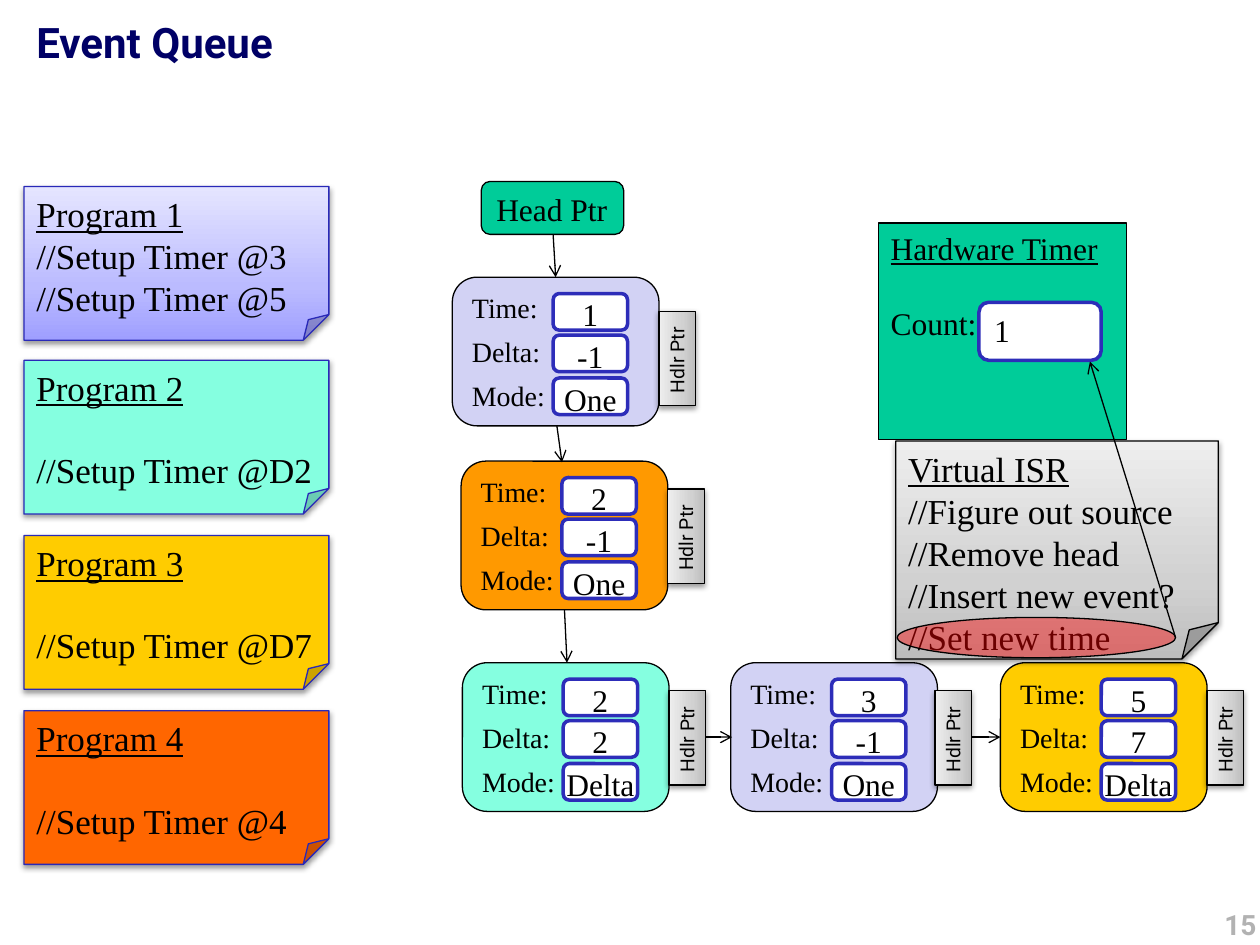
from copy import deepcopy

from lxml import etree
from pptx import Presentation
from pptx.dml.color import RGBColor
from pptx.enum.shapes import MSO_CONNECTOR, MSO_SHAPE
from pptx.enum.text import MSO_ANCHOR, MSO_AUTO_SIZE, PP_ALIGN
from pptx.oxml import parse_xml
from pptx.oxml.ns import nsdecls, qn
from pptx.util import Pt

RECT = MSO_SHAPE.RECTANGLE
ROUNDED = MSO_SHAPE.ROUNDED_RECTANGLE
FOLDED = MSO_SHAPE.FOLDED_CORNER
OVAL = MSO_SHAPE.OVAL
STRAIGHT = MSO_CONNECTOR.STRAIGHT
LEFT, CENTER, RIGHT = PP_ALIGN.LEFT, PP_ALIGN.CENTER, PP_ALIGN.RIGHT

PX = 9144  # 100 px to the inch
COLORS = {
    "navy": "000066", "page": "B2B2B2", "black": "000000", "white": "FFFFFF",
    "blue": "2929B8", "indigo": "2D2DB9", "aqua": "85FFE0", "gold": "FFCC00",
    "red_orange": "FF6600", "amber": "FF9900", "lavender": "D2D2F4",
    "green": "00CC99", "red": "FF0000",
}
GRADIENTS = {
    "violet_fade": ("9F9FFF", "BBBBFF", "E5E5FF"),
    "gray_fade": ("BDBDBD", "D1D1D1", "EEEEEE"),
}
SERIF, SANS = "Times New Roman", "Roboto"
NO_MARGINS = dict.fromkeys(
    ("margin_left", "margin_top", "margin_right", "margin_bottom"), 0)
SHADOW = (f'<a:effectLst {nsdecls("a")}><a:outerShdw blurRad="40000" dist="20000" '
          'dir="5400000" rotWithShape="0"><a:srgbClr val="000000">'
          '<a:alpha val="38000"/></a:srgbClr></a:outerShdw></a:effectLst>')


def write_lines(frame, lines, size, face=SERIF, color="black", bold=False, align=LEFT,
                heading=False, gaps=(), frame_format=()):
    """Fill a frame; gaps holds the space in points before each line."""
    settings = {"word_wrap": True, "vertical_anchor": MSO_ANCHOR.TOP, **dict(frame_format)}
    for key, value in settings.items():
        setattr(frame, key, value)
    for i, line in enumerate(lines):
        paragraph = frame.paragraphs[0] if i == 0 else frame.add_paragraph()
        paragraph.alignment = align
        if gaps:
            paragraph.space_before = Pt(gaps[i])
        run = paragraph.add_run()
        run.text = line
        font_format = {"name": face, "size": Pt(size), "bold": bold,
                       "underline": heading and i == 0}
        for key, value in font_format.items():
            setattr(run.font, key, value)
        run.font.color.rgb = RGBColor.from_string(COLORS[color])


def add_panel(shapes, kind, box, fill, line="black", weight=0.75, shadow=False):
    panel = shapes.add_shape(kind, *(v * PX for v in box))
    panel.shadow.inherit = False
    if shadow:
        properties = panel.fill._xPr
        properties.replace(properties.find(qn("a:effectLst")), parse_xml(SHADOW))
    if fill in GRADIENTS:
        panel.fill.gradient()
        panel.fill.gradient_angle = 90
        first_stop = panel.fill.gradient_stops[0]._gs
        first_stop.addnext(deepcopy(first_stop))
        stops = zip(panel.fill.gradient_stops, GRADIENTS[fill], (0, 0.35, 1))
        for stop, color, position in stops:
            stop.color.rgb = RGBColor.from_string(color)
            stop.position = position
    else:
        panel.fill.solid()
        panel.fill.fore_color.rgb = RGBColor.from_string(COLORS[fill])
    panel.line.color.rgb = RGBColor.from_string(COLORS[line])
    panel.line.width = Pt(weight)
    return panel


prs = Presentation()
prs.slide_width, prs.slide_height = 1000 * PX, 750 * PX
slide = prs.slides.add_slide(prs.slide_layouts[6])
shapes = slide.shapes

# Title and page number
for text, box, size, color, align in (
    ("Event Queue", (19, 8, 971, 100), 24, "navy", LEFT),
    ("15", (690, 715, 317, 50), 16, "page", RIGHT),
):
    label = shapes.add_textbox(*(v * PX for v in box))
    write_lines(label.text_frame, [text], size, SANS, color, True, align)

# Programs
programs = (
    ("violet_fade", ("//Setup Timer @3", "//Setup Timer @5")),
    ("aqua", ("//Setup Timer @D2",)),
    ("gold", ("//Setup Timer @D7",)),
    ("red_orange", ("//Setup Timer @4",)),
)
for i, (fill, calls) in enumerate(programs):
    program = add_panel(shapes, FOLDED, (19, 148 + i * 416 // 3, 242, 122), fill,
                        "blue", shadow=True)
    gaps = (0, 0, 0) if len(calls) == 2 else (0, 23)
    write_lines(program.text_frame, (f"Program {i + 1}", *calls), 20,
                heading=True, gaps=gaps)

# Head pointer and hardware timer
head = add_panel(shapes, ROUNDED, (382, 144, 113, 42), "green")
write_lines(head.text_frame, ["Head Ptr"], 18)
timer = add_panel(shapes, RECT, (697, 177, 197, 172), "green")
write_lines(timer.text_frame, ("Hardware Timer", "Count:"), 18, heading=True, gaps=(0, 21))
count = add_panel(shapes, ROUNDED, (777, 240, 97, 46), "white", "indigo", 2)
write_lines(count.text_frame, ["1"], 18)

# Queued events: left, top, fill, values, handler left and top
events = (
    (359, 220, "lavender", ("1", "-1", "One"), 500, 270),
    (366, 366, "amber", ("2", "-1", "One"), 507, 411),
    (367, 526, "aqua", ("2", "2", "Delta"), 508, 571),
    (580, 526, "lavender", ("3", "-1", "One"), 719, 571),
    (794, 526, "gold", ("5", "7", "Delta"), 935, 571),
)
for left, top, fill, values, _, _ in events:
    event = shapes.add_group_shape().shapes
    card = add_panel(event, ROUNDED, (left, top, 164, 118), fill)
    write_lines(card.text_frame, ("Time:", "Delta:", "Mode:"), 16, gaps=(0, 6, 6))
    for i, value in enumerate(values):
        field = add_panel(event, ROUNDED, (left + 80, top + 13 + i * 67 // 2, 59, 29),
                          "white", "indigo", 2)
        write_lines(field.text_frame, [value], 18, align=CENTER, frame_format=NO_MARGINS)

# Virtual interrupt routine with its last step marked
routine = add_panel(shapes, FOLDED, (711, 350, 256, 173), "gray_fade", shadow=True)
write_lines(routine.text_frame,
            ("Virtual ISR", "//Figure out source", "//Remove head",
             "//Insert new event?", "//Set new time"), 20, heading=True)
marker = add_panel(shapes, OVAL, (712, 490, 221, 32), "red")
marker_color = marker.fill._xPr.find(qn("a:solidFill"))[0]
etree.SubElement(marker_color, qn("a:alpha"), val="42000")

# Arrows
for ends in (
    (439, 186, 441, 220), (442, 338, 446, 367), (448, 484, 450, 526),
    (530, 585, 581, 585), (744, 585, 794, 585), (933, 506, 865, 287),
):
    arrow = shapes.add_connector(STRAIGHT, *(v * PX for v in ends))
    arrow.line.color.rgb = RGBColor.from_string(COLORS["black"])
    arrow.line.width = Pt(0.75)
    etree.SubElement(arrow.line._get_or_add_ln(), qn("a:tailEnd"), type="arrow")
    etree.SubElement(arrow._element.spPr, qn("a:effectLst"))

# Handler pointers cover the arrow starts
for *_, left, top in events:
    handler = add_panel(shapes, RECT, (left, top, 75, 29), "gray_fade", shadow=True)
    handler.rotation = 270
    write_lines(handler.text_frame, ["Hdlr Ptr"], 11, SANS, frame_format={
        "word_wrap": False, "auto_size": MSO_AUTO_SIZE.SHAPE_TO_FIT_TEXT})

prs.save("out.pptx")
